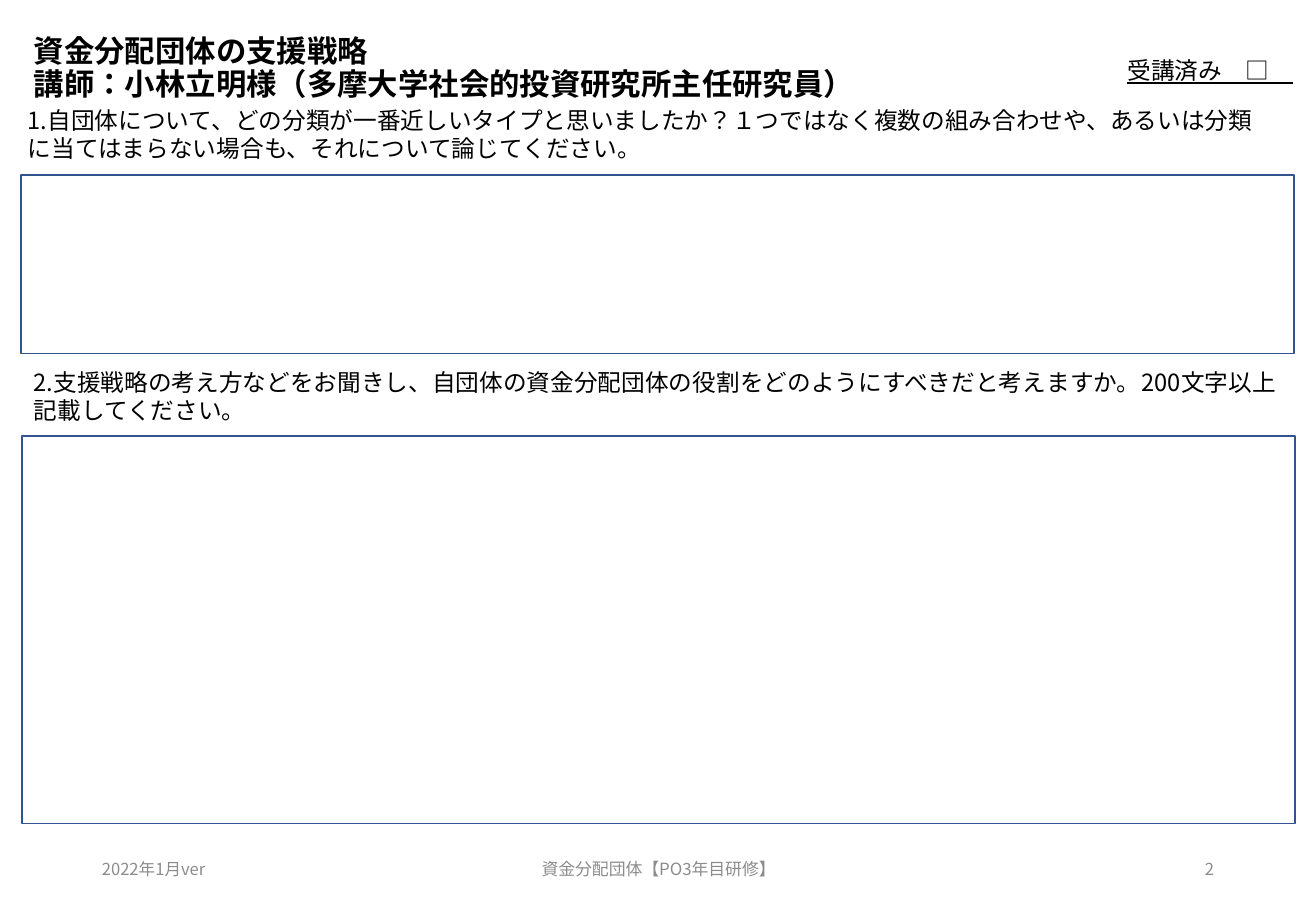
"""Build a training worksheet slide with two questions and answer boxes."""
from dataclasses import dataclass

from lxml import etree
from pptx import Presentation
from pptx.dml.color import RGBColor
from pptx.enum.shapes import MSO_SHAPE
from pptx.enum.text import MSO_ANCHOR, PP_ALIGN
from pptx.oxml.ns import qn
from pptx.util import Inches, Pt

RECTANGLE = MSO_SHAPE.RECTANGLE
TOP, MIDDLE = MSO_ANCHOR.TOP, MSO_ANCHOR.MIDDLE
LEFT, CENTER, RIGHT = PP_ALIGN.LEFT, PP_ALIGN.CENTER, PP_ALIGN.RIGHT


@dataclass(frozen=True)
class Theme:
    font: str = "Noto Sans CJK JP"
    ink: RGBColor = RGBColor(0, 0, 0)
    muted: RGBColor = RGBColor(0x8C, 0x8C, 0x8C)
    paper: RGBColor = RGBColor(255, 255, 255)
    border: RGBColor = RGBColor(0x32, 0x54, 0x91)
    title_size: float = 18
    body_size: float = 14
    footer_size: float = 9.8
    footer_center_size: float = 10


THEME = Theme()

TITLE = ["資金分配団体の支援戦略", "講師：小林立明様（多摩大学社会的投資研究所主任研究員）"]
TITLE_AREA = (0.18, 0.14, 9.34, 0.86)
STATUS = "受講済み　□　"
STATUS_AREA = (9.18, 0.41, 2.01, 0.34)
QUESTIONS = [
    ("1.自団体について、どの分類が一番近しいタイプと思いましたか？１つではなく複数の組み合わせや、"
     "あるいは分類に当てはまらない場合も、それについて論じてください。",
     (0.13, 0.82, 10.39, 0.57), (0.17, 1.44, 10.48, 1.47)),
    ("2.支援戦略の考え方などをお聞きし、自団体の資金分配団体の役割をどのようにすべきだと考えますか。"
     "200文字以上記載してください。",
     (0.18, 2.98, 10.48, 0.57), (0.18, 3.59, 10.48, 3.19)),
]
FOOTER_TOP, FOOTER_HEIGHT = 6.95, 0.4
FOOTERS = [
    ("2022年1月ver", 0.74, 2.44, LEFT, THEME.footer_size),
    ("資金分配団体【PO3年目研修】", 3.59, 3.66, CENTER, THEME.footer_center_size),
    ("2", 7.65, 2.44, RIGHT, THEME.footer_size),
]


def add_text(slide, lines, area, size, color=THEME.ink, anchor=TOP,
             align=LEFT, bold=False, underline=False, spacing=1.0):
    frame = slide.shapes.add_textbox(*map(Inches, area)).text_frame
    frame.word_wrap = True
    frame.vertical_anchor = anchor
    paragraph = frame.paragraphs[0]
    paragraph.alignment = align
    paragraph.line_spacing = spacing
    for index, line in enumerate(lines):
        if index:
            paragraph.add_line_break()
        run = paragraph.add_run()
        run.text = line
        font = run.font
        font.name = THEME.font
        font.size = Pt(size)
        font.bold = bold
        font.underline = underline
        font.color.rgb = color
        properties = run._r.get_or_add_rPr()
        properties.set("lang", "ja-JP")
        latin = properties.find(qn("a:latin"))
        east_asian = etree.Element(qn("a:ea"), typeface=THEME.font)
        latin.addnext(east_asian)


def add_answer_box(slide, area):
    shape = slide.shapes.add_shape(RECTANGLE, *map(Inches, area))
    shape.shadow.inherit = False
    shape.fill.solid()
    shape.fill.fore_color.rgb = THEME.paper
    shape.line.color.rgb = THEME.border
    shape.line.width = Pt(1)


def main():
    presentation = Presentation()
    presentation.slide_width = Inches(10.83)
    presentation.slide_height = Inches(7.5)
    slide = presentation.slides.add_slide(presentation.slide_layouts[6])

    add_text(slide, TITLE, TITLE_AREA, THEME.title_size,
             anchor=MIDDLE, bold=True, spacing=0.9)
    for question, text_area, box_area in QUESTIONS:
        add_answer_box(slide, box_area)
        add_text(slide, [question], text_area, THEME.body_size)
    add_text(slide, [STATUS], STATUS_AREA, THEME.body_size, underline=True)
    for text, left, width, align, size in FOOTERS:
        add_text(slide, [text], (left, FOOTER_TOP, width, FOOTER_HEIGHT), size,
                 color=THEME.muted, anchor=MIDDLE, align=align)

    presentation.save("out.pptx")


if __name__ == "__main__":
    main()
